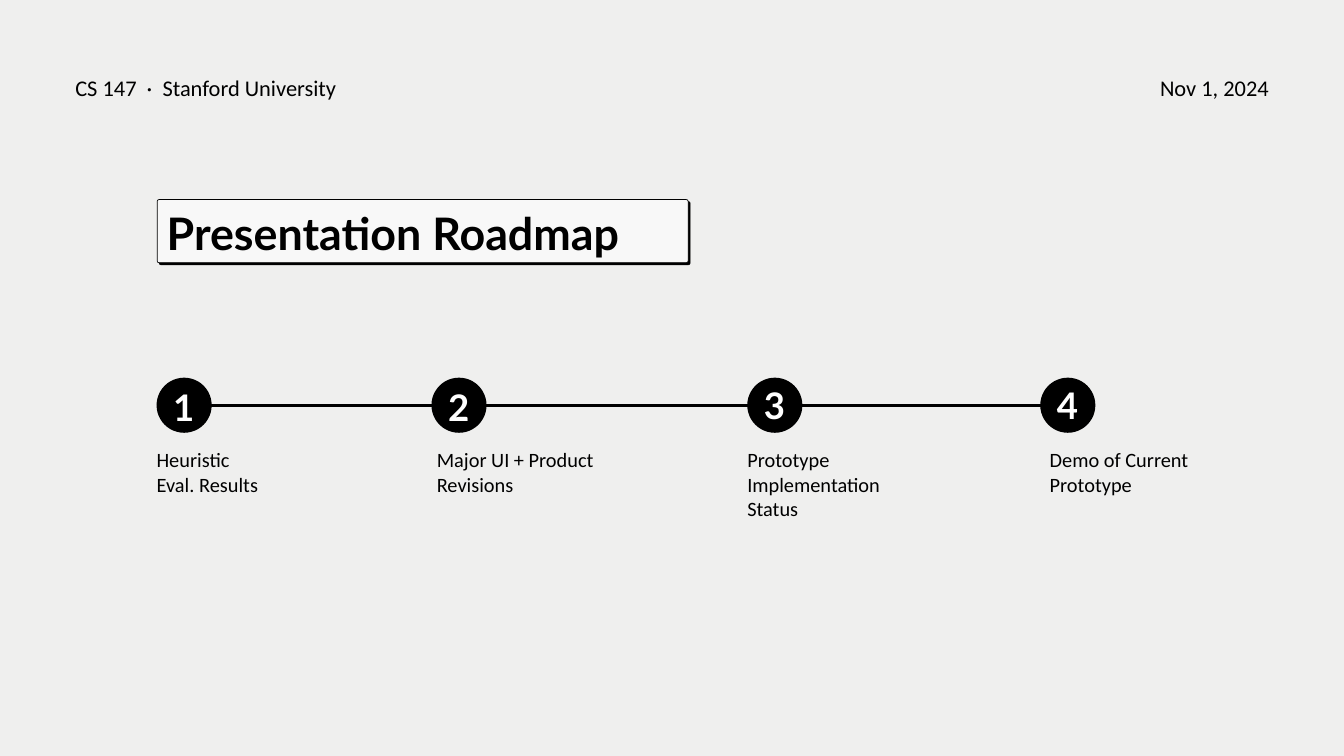
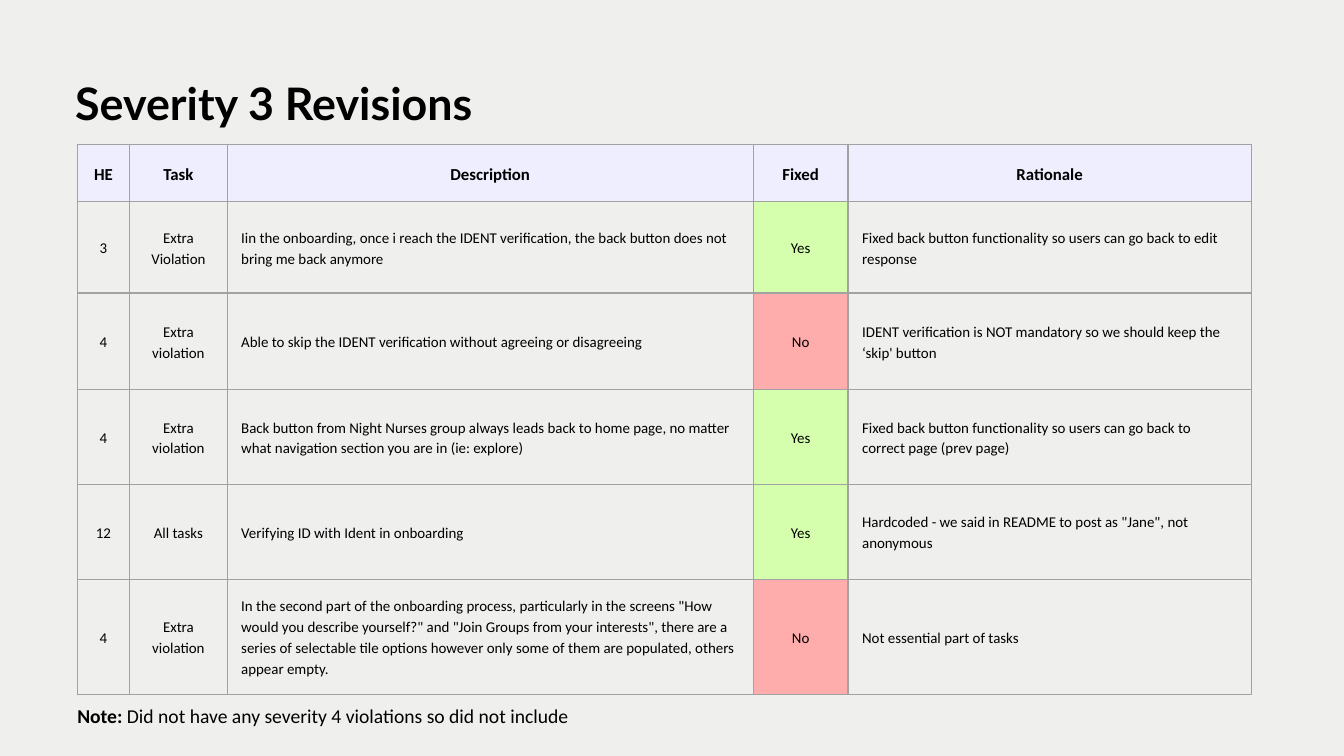
import pptx
import pptx.util
import pptx.dml.color
import pptx.enum.shapes
import pptx.enum.text
import pptx.oxml
import pptx.oxml.ns
from lxml import etree

Inches, Pt = pptx.util.Inches, pptx.util.Pt
SHAPE = pptx.enum.shapes.MSO_SHAPE
ALIGN = pptx.enum.text.PP_ALIGN

WIDTH, HEIGHT = 20, 11.25
MARGIN = 1.12
HEADING, BODY = "Lato", "Calibri"
COLORS = {
    "ground": "EFEFEE",
    "ink": "000000",
    "card": "F8F8F8",
    "white": "FFFFFF",
    "header": "EEEEFF",
    "Yes": "D5FFAC",
    "No": "FFACAC",
    "border": "A2A2A2",
}

COURSE = "CS 147  ·  Stanford University"
DATE = "Nov 1, 2024"
ROADMAP_TITLE = "Presentation Roadmap"
STEP_TOP, STEP_SIZE = 5.62, 0.82
STEPS = [
    # left, number drop, label indent, label width, label lines
]
STEPS = [
    {"left": 2.33, "number_top": 5.62, "indent": 0, "width": 4.76, "label": ["Heuristic", "Eval. Results"]},
    {"left": 6.42, "number_top": 5.62, "indent": 0.08, "width": 2.63, "label": ["Major UI + Product Revisions"]},
    {"left": 11.12, "number_top": 5.59, "indent": 0, "width": 2.61, "label": ["Prototype Implementation Status"]},
    {"left": 15.48, "number_top": 5.59, "indent": 0.14, "width": 3.13, "label": ["Demo of Current Prototype"]},
]

REVISIONS_TITLE = "Severity 3 Revisions"
COLUMNS = [("HE", 0.78), ("Task", 1.45), ("Description", 7.83), ("Fixed", 1.41), ("Rationale", 6)]
LEFT_ALIGNED = ("Description", "Rationale")
ROW_HEIGHTS = [0.85, 1.36, 1.44, 1.41, 1.41, 1.71]
REVISIONS = [
    ("3", "Extra Violation",
     "Iin the onboarding, once i reach the IDENT verification, the back button does not bring me back anymore",
     "Yes", "Fixed back button functionality so users can go back to edit response"),
    ("4", "Extra violation",
     "Able to skip the IDENT verification without agreeing or disagreeing",
     "No", "IDENT verification is NOT mandatory so we should keep the ‘skip' button"),
    ("4", "Extra violation",
     "Back button from Night Nurses group always leads back to home page, no matter what navigation "
     "section you are in (ie: explore)",
     "Yes", "Fixed back button functionality so users can go back to correct page (prev page)"),
    ("12", "All tasks", "Verifying ID with Ident in onboarding",
     "Yes", 'Hardcoded - we said in README to post as "Jane", not anonymous'),
    ("4", "Extra violation",
     'In the second part of the onboarding process, particularly in the screens "How would you describe '
     'yourself?" and "Join Groups from your interests", there are a series of selectable tile options '
     "however only some of them are populated, others appear empty.",
     "No", "Not essential part of tasks"),
]
NOTE = [("Note:", True), (" Did not have any severity 4 violations so did not include", False)]


def rgb(name):
    return pptx.dml.color.RGBColor.from_string(COLORS[name])


def style(p, size, spacing, font=BODY, bold=False, color="ink", align=ALIGN.LEFT):
    p.alignment = align
    p.line_spacing = Pt(spacing)
    p.font.size = Pt(size)
    p.font.name = font
    p.font.bold = bold
    p.font.color.rgb = rgb(color)


def add_text(s, box, lines, size, spacing, **look):
    tf = s.shapes.add_textbox(*map(Inches, box)).text_frame
    tf.word_wrap = True
    tf.margin_left = tf.margin_top = tf.margin_right = tf.margin_bottom = 0
    for i, line in enumerate(lines):
        p = tf.add_paragraph() if i else tf.paragraphs[0]
        p.text = line
        style(p, size, spacing, **look)
    return tf


def add_title(s, box, title):
    add_text(s, box, [title], 48, 56.6, font=HEADING, bold=True)


def add_filled(s, kind, box, color):
    sp = s.shapes.add_shape(kind, *map(Inches, box))
    sp.shadow.inherit = False
    sp.fill.solid()
    sp.fill.fore_color.rgb = rgb(color)
    sp.line.fill.background()
    return sp


def add_slide(prs):
    s = prs.slides.add_slide(prs.slide_layouts[6])
    s.background.fill.solid()
    s.background.fill.fore_color.rgb = rgb("ground")
    return s


def add_card(s, left, top, width, height, offset):
    for shift, color in ((offset, "ink"), (0, "card")):
        sp = add_filled(s, SHAPE.ROUNDED_RECTANGLE, (left + shift, top + shift, width, height), color)
        sp.adjustments[0] = 0.03
        sp.line.color.rgb = rgb("ink")
        sp.line.width = Pt(0.75)


def add_timeline(s):
    middle = STEP_TOP + STEP_SIZE / 2
    ends = STEPS[0]["left"], middle, STEPS[-1]["left"] + STEP_SIZE * 0.4, middle
    line = s.shapes.add_connector(pptx.enum.shapes.MSO_CONNECTOR.STRAIGHT, *map(Inches, ends))
    line.line.color.rgb = rgb("ink")
    line.line.width = Pt(3)
    etree.SubElement(line._element.spPr, pptx.oxml.ns.qn("a:effectLst"))
    for number, step in enumerate(STEPS, 1):
        left = step["left"]
        add_filled(s, SHAPE.OVAL, (left, STEP_TOP, STEP_SIZE, STEP_SIZE), "ink")
        add_text(s, (left + 0.15, step["number_top"], 0.51, 0.73), [str(number)], 39.2, 54.8,
                 font=HEADING, bold=True, color="white", align=ALIGN.CENTER)
        height = 1.07 if number == 3 else 0.72
        add_text(s, (left + step["indent"], 6.66, step["width"], height), step["label"], 21.8, 26.1)


def add_borders(cell):
    tcPr = cell._tc.get_or_add_tcPr()
    for side in "LRTB":
        tcPr.append(pptx.oxml.parse_xml(
            f'<a:ln{side} {pptx.oxml.ns.nsdecls("a")} w="{Pt(1.5)}"><a:solidFill>'
            f'<a:srgbClr val="{COLORS["border"]}"/></a:solidFill></a:ln{side}>'))


def fill_cell(cell, text, column, header):
    cell.text = text
    cell.vertical_anchor = pptx.enum.text.MSO_ANCHOR.MIDDLE
    cell.margin_left = cell.margin_top = cell.margin_right = cell.margin_bottom = Inches(0.21)
    add_borders(cell)
    color = "header" if header else text if column == "Fixed" else None
    if color:
        cell.fill.solid()
        cell.fill.fore_color.rgb = rgb(color)
    else:
        cell.fill.background()
    left_aligned = column in LEFT_ALIGNED and not header
    size = 18 if header else 16
    style(cell.text_frame.paragraphs[0], size, size * 1.4, bold=header,
          align=ALIGN.LEFT if left_aligned else ALIGN.CENTER)


def add_revisions(s, left, top):
    names = [name for name, _ in COLUMNS]
    widths = [width for _, width in COLUMNS]
    rows = [names] + REVISIONS
    box = left, top, sum(widths), sum(ROW_HEIGHTS)
    table = s.shapes.add_table(len(rows), len(names), *map(Inches, box)).table
    table.first_row = table.horz_banding = False
    for column, width in zip(table.columns, widths):
        column.width = Inches(width)
    for r, (row, height) in enumerate(zip(rows, ROW_HEIGHTS)):
        table.rows[r].height = Inches(height)
        for c, text in enumerate(row):
            fill_cell(table.cell(r, c), text, names[c], r == 0)


def build_roadmap(prs):
    s = add_slide(prs)
    add_card(s, 2.34, 2.97, 7.9, 0.94, 0.03)
    add_title(s, (2.48, 3.07, 7.55, 0.79), ROADMAP_TITLE)
    add_timeline(s)
    width = 6.79
    add_text(s, (WIDTH - MARGIN - width, 1.04, width, 0.44), [DATE], 24, 33.6, align=ALIGN.RIGHT)
    add_text(s, (MARGIN, 1.04, width, 0.44), [COURSE], 24, 33.6)


def build_revisions(prs):
    s = add_slide(prs)
    add_revisions(s, 1.15, 2.15)
    add_title(s, (MARGIN, 1.14, 9.27, 0.78), REVISIONS_TITLE)
    p = add_text(s, (1.15, 10.36, 10.17, 0.47), [""], 21, 33.6).paragraphs[0]
    for text, bold in NOTE:
        r = p.add_run()
        r.text = text
        r.font.bold = bold


def main():
    prs = pptx.Presentation()
    prs.slide_width, prs.slide_height = Inches(WIDTH), Inches(HEIGHT)
    build_roadmap(prs)
    build_revisions(prs)
    prs.save("out.pptx")


if __name__ == "__main__":
    main()
